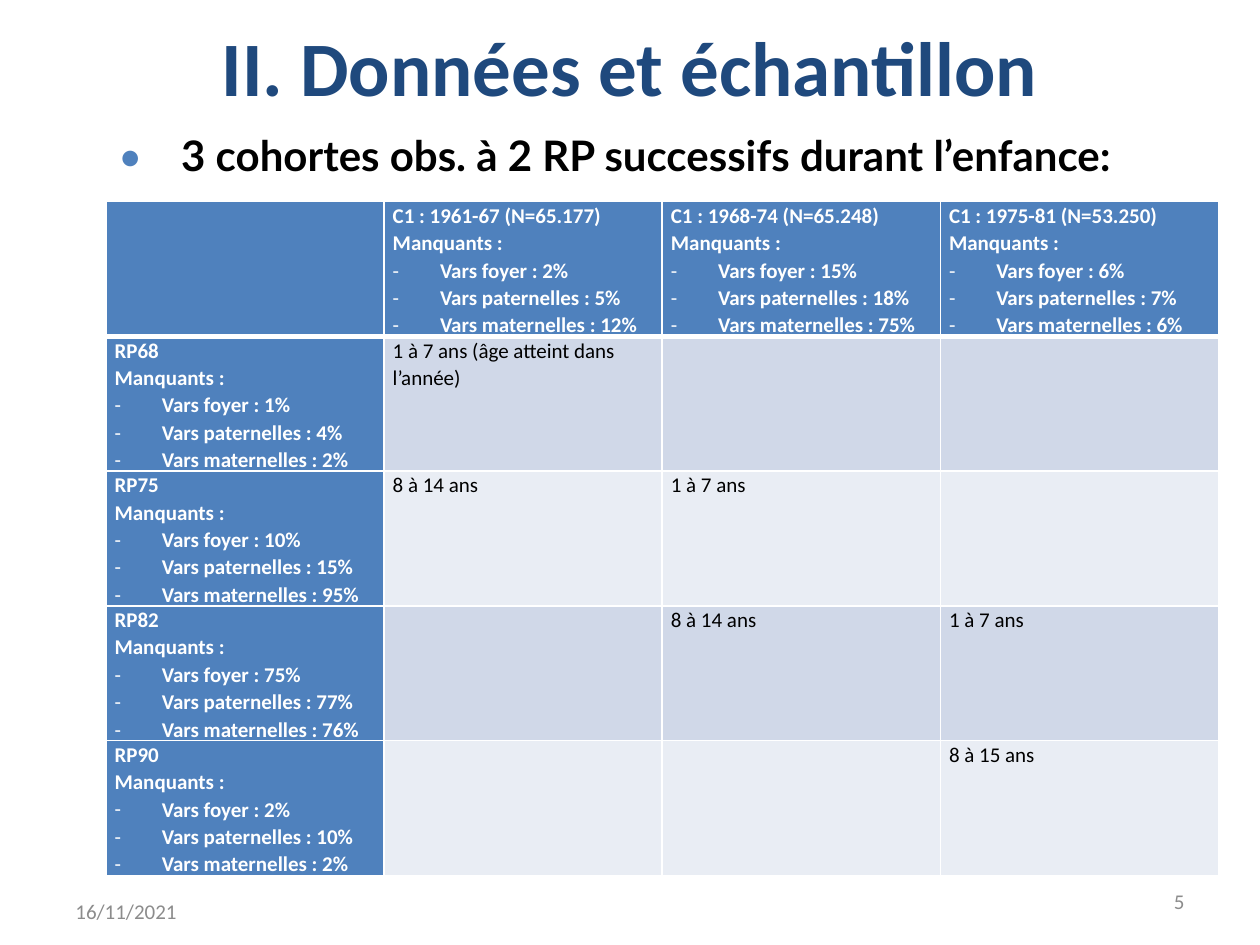
from lxml import etree
from pptx import Presentation
from pptx.dml.color import RGBColor
from pptx.enum.text import MSO_ANCHOR, PP_ALIGN
from pptx.oxml.ns import qn
from pptx.util import Pt

LEFT, CENTER, RIGHT = PP_ALIGN.LEFT, PP_ALIGN.CENTER, PP_ALIGN.RIGHT
TOP, MIDDLE = MSO_ANCHOR.TOP, MSO_ANCHOR.MIDDLE

COLORS = {
    "title": "1F497D", "accent": "4F81BD", "text": "000000", "white": "FFFFFF",
    "footer": "8C8C8C", "odd_row": "D0D8E8", "even_row": "E9EDF4",
}

TITLE = "II. Données et échantillon"
HEADLINE = "3 cohortes obs. à 2 RP successifs durant l’enfance:"
DATE, PAGE = "16/11/2021", "5"

# Heading, then missing shares for household, father and mother variables
MISSING_LABELS = ["Vars foyer", "Vars paternelles", "Vars maternelles"]
COHORTS = [
    ("C1 : 1961-67 (N=65.177)", "2%", "5%", "12%"),
    ("C1 : 1968-74 (N=65.248)", "15%", "18%", "75%"),
    ("C1 : 1975-81 (N=53.250)", "6%", "7%", "6%"),
]
CENSUSES = [
    ("RP68", "1%", "4%", "2%"),
    ("RP75", "10%", "15%", "95%"),
    ("RP82", "75%", "77%", "76%"),
    ("RP90", "2%", "10%", "2%"),
]
AGES = [
    ["1 à 7 ans (âge atteint dans l’année)", "", ""],
    ["8 à 14 ans", "1 à 7 ans", ""],
    ["", "8 à 14 ans", "1 à 7 ans"],
    ["", "", "8 à 15 ans"],
]

TABLE_LEFT, TABLE_TOP = 60.5, 115.2
COLUMN_WIDTH, ROW_HEIGHT = 158.94, 76.32
THIN, THICK = 1, 3


def write(paragraph, text, size=12, color="text", bold=False, font="Calibri",
          align=LEFT, spacing=None, bullet=None, bullet_color=None, indent=0):
    paragraph.alignment = align
    if spacing:
        paragraph.line_spacing = spacing
    run = paragraph.add_run()
    run.text = text
    run.font.size = Pt(size)
    run.font.name = font
    run.font.bold = bold
    run.font.color.rgb = RGBColor.from_string(COLORS[color])
    if bullet:
        properties = paragraph._p.get_or_add_pPr()
        properties.set("marL", str(Pt(indent)))
        properties.set("indent", str(-Pt(indent)))
        if bullet_color:
            holder = etree.SubElement(properties, qn("a:buClr"))
            etree.SubElement(holder, qn("a:srgbClr"), val=COLORS[bullet_color])
        etree.SubElement(properties, qn("a:buFont"), typeface=font)
        etree.SubElement(properties, qn("a:buChar"), char=bullet)


def add_text(slide, box, text, anchor=MIDDLE, **style):
    frame = slide.shapes.add_textbox(*map(Pt, box)).text_frame
    frame.word_wrap = True
    frame.vertical_anchor = anchor
    write(frame.paragraphs[0], text, **style)


def set_borders(cell, widths):
    """Draw white borders; widths are given left, right, top, bottom."""
    properties = cell._tc.get_or_add_tcPr()
    for position, (side, width) in enumerate(zip("LRTB", widths)):
        line = etree.Element(qn(f"a:ln{side}"), w=str(Pt(width)))
        fill = etree.SubElement(line, qn("a:solidFill"))
        etree.SubElement(fill, qn("a:srgbClr"), val=COLORS["white"])
        properties.insert(position, line)


def write_heading(cell, heading, *shares):
    style = {"color": "white", "bold": True, "spacing": 1.07}
    frame = cell.text_frame
    write(frame.paragraphs[0], heading, **style)
    write(frame.add_paragraph(), "Manquants :", **style)
    for label, share in zip(MISSING_LABELS, shares):
        write(frame.add_paragraph(), f"{label} : {share}",
              bullet="-", indent=27, **style)


def add_cohort_table(slide):
    row_count, column_count = len(CENSUSES) + 1, len(COHORTS) + 1
    table = slide.shapes.add_table(
        row_count, column_count, Pt(TABLE_LEFT), Pt(TABLE_TOP),
        Pt(COLUMN_WIDTH * column_count), Pt(ROW_HEIGHT * row_count)).table
    for r in range(row_count):
        for c in range(column_count):
            cell = table.cell(r, c)
            cell.margin_left = cell.margin_right = Pt(5)
            cell.margin_top = cell.margin_bottom = 0
            if r == 0 or c == 0:
                fill = "accent"
            else:
                fill = "odd_row" if r % 2 else "even_row"
            cell.fill.solid()
            cell.fill.fore_color.rgb = RGBColor.from_string(COLORS[fill])
            set_borders(cell, (THIN, THIN, THICK if r == 1 else THIN,
                               THICK if r == 0 else THIN))
            if r == 0 and c > 0:
                write_heading(cell, *COHORTS[c - 1])
            elif r > 0 and c == 0:
                write_heading(cell, *CENSUSES[r - 1])
            elif r > 0 and AGES[r - 1][c - 1]:
                write(cell.text_frame.paragraphs[0], AGES[r - 1][c - 1],
                      spacing=1.07)


def main():
    deck = Presentation()
    deck.slide_width, deck.slide_height = Pt(720), Pt(540)
    slide = deck.slides.add_slide(deck.slide_layouts[6])
    add_text(slide, (36, 5.8, 648, 64), TITLE,
             size=44, color="title", bold=True, align=CENTER)
    add_text(slide, (516, 500.4, 168, 28.8), PAGE, color="footer", align=RIGHT)
    add_text(slide, (36, 506.2, 168, 28.8), DATE, color="footer")
    add_text(slide, (60.5, 70.6, 648, 453), HEADLINE, anchor=TOP, size=24,
             bold=True, font="Lato", bullet="•", bullet_color="accent", indent=36)
    add_cohort_table(slide)
    deck.save("out.pptx")


if __name__ == "__main__":
    main()
